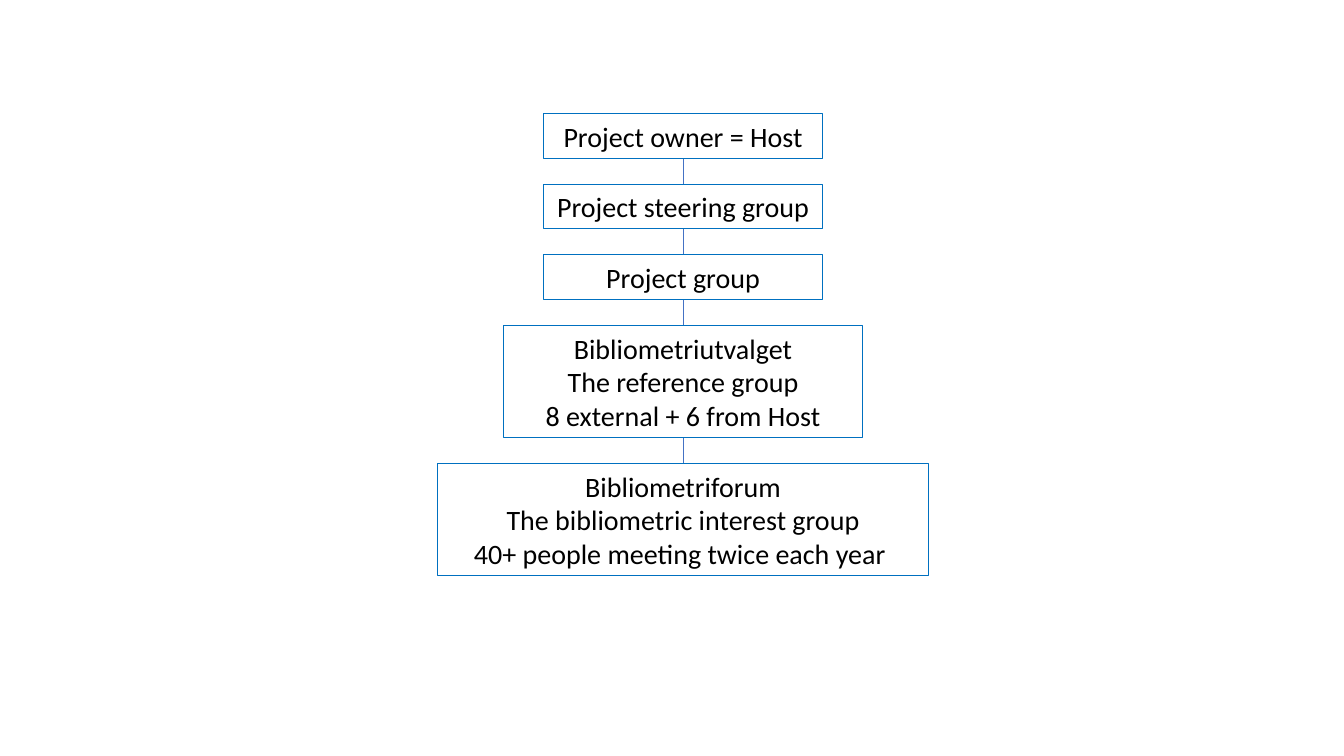
from dataclasses import dataclass

from lxml import etree
from pptx import Presentation
from pptx.dml.color import RGBColor
from pptx.enum.shapes import MSO_CONNECTOR, MSO_SHAPE
from pptx.enum.text import MSO_ANCHOR, MSO_AUTO_SIZE, PP_ALIGN
from pptx.oxml.ns import qn
from pptx.util import Pt

RECT = MSO_SHAPE.RECTANGLE
STRAIGHT = MSO_CONNECTOR.STRAIGHT
CENTER = PP_ALIGN.CENTER
MIDDLE = MSO_ANCHOR.MIDDLE
GROW = MSO_AUTO_SIZE.SHAPE_TO_FIT_TEXT
BLANK = 6
TOP, BOTTOM = 0, 2
SCALE = 9144  # EMU per px, 100 px to the inch


@dataclass(frozen=True)
class Theme:
    font: str = "Calibri"
    size: int = 20
    ink: str = "000000"
    fill: str = "FFFFFF"
    edge: str = "0070C0"
    link: str = "4472C4"
    edge_pt: float = 0.75
    link_pt: float = 0.5


THEME = Theme()
GAP = 26
LEVELS = [  # width, height, lines of text
    (277, 44, ["Project owner = Host"]),
    (277, 44, ["Project steering group"]),
    (277, 44, ["Project group"]),
    (356, 111, ["Bibliometriutvalget", "The reference group",
                "8 external + 6 from Host"]),
    (487, 111, ["Bibliometriforum", "The bibliometric interest group",
                "40+ people meeting twice each year "]),
]


def px(n):
    return round(n * SCALE)


def color(code):
    return RGBColor.from_string(code)


def write(frame, lines, size=THEME.size, ink=THEME.ink, align=CENTER):
    frame.word_wrap = True
    frame.auto_size = GROW
    frame.vertical_anchor = MIDDLE
    for i, line in enumerate(lines):
        para = frame.paragraphs[0] if i == 0 else frame.add_paragraph()
        para.alignment = align
        run = para.add_run()
        run.text = line
        run.font.name = THEME.font
        run.font.size = Pt(size)
        run.font.color.rgb = color(ink)


def add_box(slide, left, top, width, height, lines):
    box = slide.shapes.add_shape(RECT, px(left), px(top), px(width), px(height))
    box.shadow.inherit = False
    box.fill.solid()
    box.fill.fore_color.rgb = color(THEME.fill)
    box.line.color.rgb = color(THEME.edge)
    box.line.width = Pt(THEME.edge_pt)
    write(box.text_frame, lines)
    return box


def add_link(slide):
    link = slide.shapes.add_connector(STRAIGHT, 0, 0, 0, 0)
    link.line.color.rgb = color(THEME.link)
    link.line.width = Pt(THEME.link_pt)
    etree.SubElement(link.element.spPr, qn("a:effectLst"))
    return link


def add_chain(slide, left, top, width):
    """Stack the levels, centred, over one line that runs behind them."""
    link = add_link(slide)
    boxes = []
    for wide, high, lines in LEVELS:
        boxes.append(add_box(slide, left + (width - wide) / 2, top,
                             wide, high, lines))
        top += high + GAP
    link.begin_connect(boxes[0], BOTTOM)
    link.end_connect(boxes[-1], TOP)


def main():
    deck = Presentation()
    deck.slide_width, deck.slide_height = px(1333), px(750)
    slide = deck.slides.add_slide(deck.slide_layouts[BLANK])
    add_chain(slide, 434, 113, 487)
    deck.save("out.pptx")


if __name__ == "__main__":
    main()
